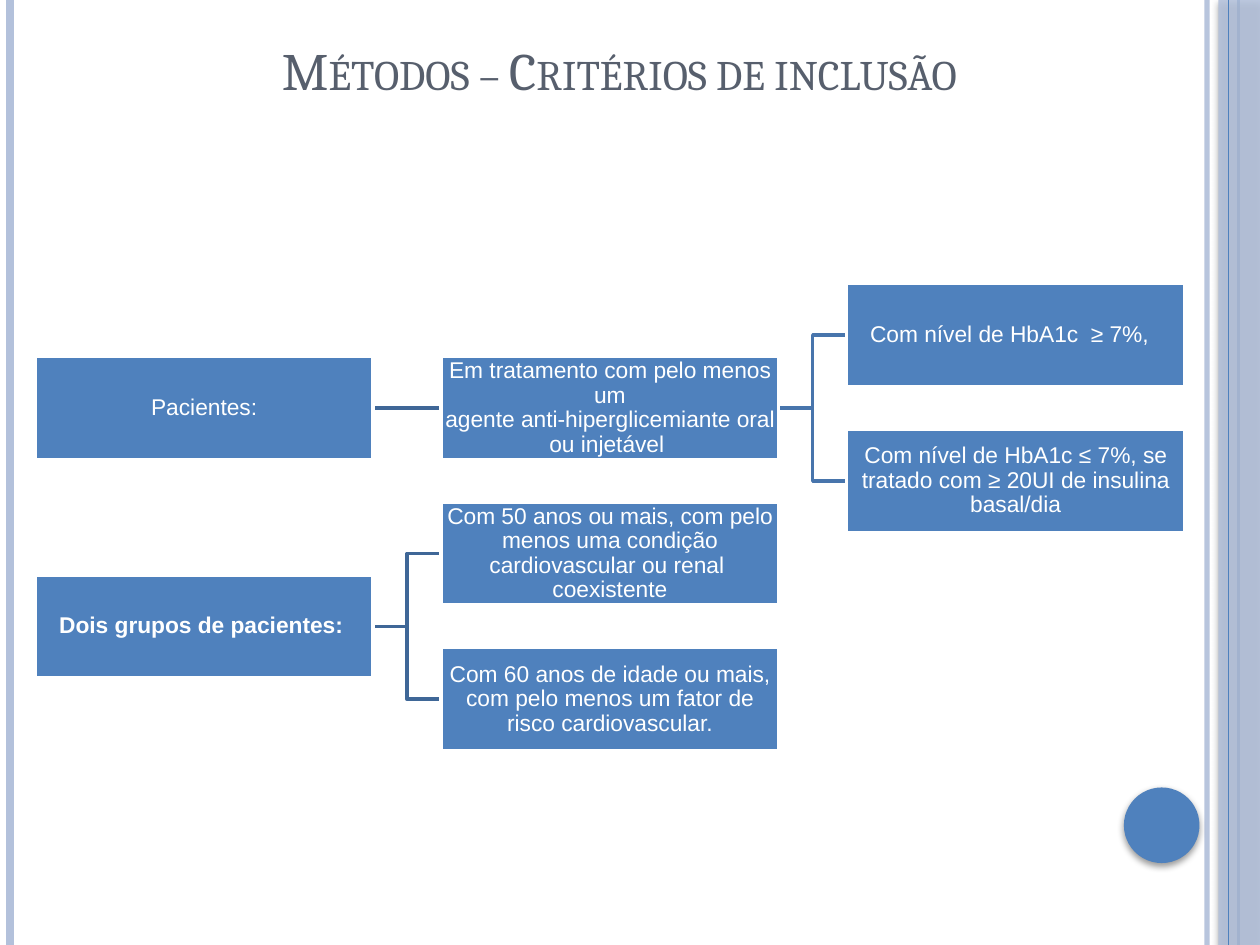
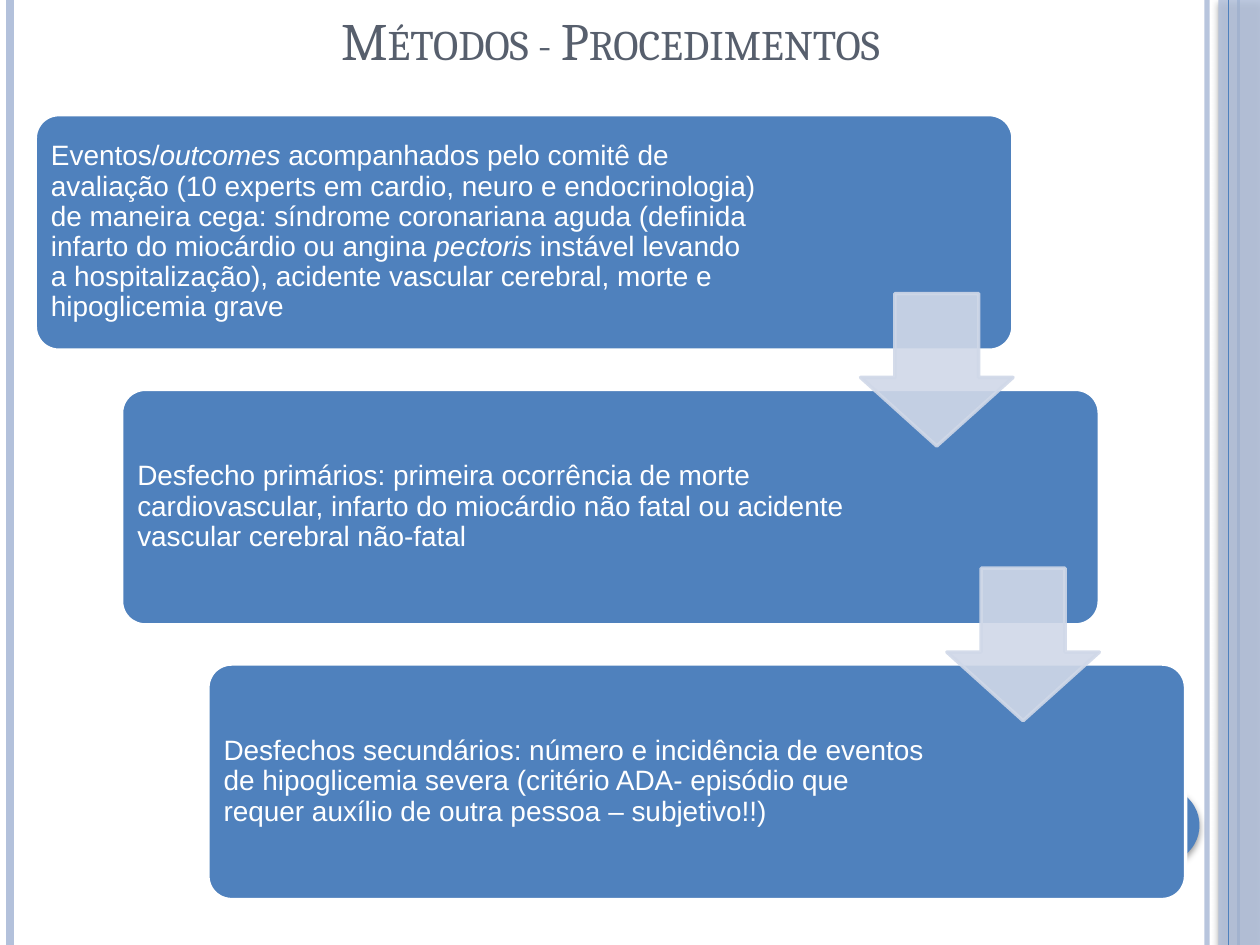
"""Build two slides on study methods: an inclusion tree and a staircase of procedures."""
import lxml.etree
import pptx
import pptx.dml.color
import pptx.enum.shapes
import pptx.enum.text
import pptx.oxml.ns
import pptx.util

COLORS = {
    "blue": "4F81BD", "band": "B3C1DB", "title": "575F6D", "white": "FFFFFF",
    "first link": "3F6797", "second link": "4875AC", "arrow": "D0D8E8", "shadow": "000000",
}
WIDTH, HEIGHT = 10, 7.5
TITLE_FONT, BODY_FONT = "Cambria", "Arial"

RULES = [
    (9.58, "band", 3, 93),
    (0.08, "band", 4.5, 100),
    (9.83, "blue", 1.5, 100),
    (9.75, "blue", 0.75, 100),
]
TITLES = [
    ("Métodos – Critérios de inclusão", (0.83, 0.21, 8.17, 0.64), 0.05),
    ("Métodos - Procedimentos", (0.76, 0.24, 8.17, 0.64), 0.32),
]

CRITERIA = {
    "patients": (0, 1, "Pacientes:"),
    "treated": (1, 1, "Em tratamento com pelo menos um\n"
                "agente anti-hiperglicemiante oral ou injetável "),
    "above": (2, 0, "Com nível de HbA1c  ≥ 7%,  "),
    "below": (2, 2, "Com nível de HbA1c ≤ 7%, se tratado com ≥ 20UI de insulina basal/dia"),
    "groups": (0, 4, "Dois grupos de pacientes: "),
    "fifty": (1, 3, "Com 50 anos ou mais, com pelo menos uma condição cardiovascular "
              "ou renal  coexistente"),
    "sixty": (1, 5, "Com 60 anos de idade ou mais, com pelo menos um fator de risco "
              "cardiovascular."),
}
BOLD_CRITERIA = {"groups"}
BRANCHES = [("groups", "sixty"), ("groups", "fifty"), ("treated", "below"),
            ("treated", "above"), ("patients", "treated")]
TREE_LEFT, TREE_TOP, COLUMN_STEP, ROW_STEP = 0.28, 2.25, 3.22, 0.578
NODE_WIDTH, NODE_HEIGHT = 2.68, 0.82

STEPS = [
    [("Eventos/", False), ("outcomes", True),
     (" acompanhados pelo comitê de avaliação (10 experts em cardio, neuro e endocrinologia) "
      "de maneira cega: síndrome coronariana aguda (definida infarto do miocárdio ou angina ",
      False),
     ("pectoris", True),
     (" instável levando a hospitalização), acidente vascular cerebral, morte e "
      "hipoglicemia grave", False)],
    [("Desfecho primários: primeira ocorrência de morte cardiovascular, infarto do miocárdio "
      "não fatal ou acidente vascular cerebral não-fatal", False)],
    [("Desfechos secundários: número e incidência de eventos de hipoglicemia severa "
      "(critério ADA- episódio que requer auxílio de outra pessoa – subjetivo!!)", False)],
]
STEP_LEFT, STEP_TOP, STEP_RIGHTWARD, STEP_DOWNWARD = 0.28, 0.91, 0.685, 2.18
STEP_WIDTH, STEP_HEIGHT = 7.76, 1.87
ARROW_LEFT, ARROW_TOP, ARROW_SIZE = 6.83, 2.33, 1.21


def inches(*lengths):
    return [pptx.util.Inches(length) for length in lengths]


def color(name):
    return pptx.dml.color.RGBColor.from_string(COLORS[name])


def child(parent, tag, **attributes):
    return lxml.etree.SubElement(parent, pptx.oxml.ns.qn(tag), attributes)


def set_alpha(parent, percent):
    if percent < 100:
        tint = next(parent.iter(pptx.oxml.ns.qn("a:srgbClr")))
        child(tint, "a:alpha", val=str(percent * 1000))


def style_line(shape, name, points, alpha=100):
    shape.line.color.rgb = color(name)
    shape.line.width = pptx.util.Pt(points)
    set_alpha(shape.line._get_or_add_ln(), alpha)


def add_line(page, start, end, name, points, alpha=100):
    line = page.shapes.add_connector(
        pptx.enum.shapes.MSO_CONNECTOR.STRAIGHT, *inches(*start, *end))
    style_line(line, name, points, alpha)
    child(line.element.spPr, "a:effectLst")
    return line


def add_box(page, kind, place, fill, alpha=100, outline=None, adjustments=()):
    box = page.shapes.add_shape(kind, *inches(*place))
    box.shadow.inherit = False
    box.fill.solid()
    box.fill.fore_color.rgb = color(fill)
    set_alpha(box.element.spPr, alpha)
    if outline:
        style_line(box, outline, 2, alpha)
    else:
        box.line.fill.background()
    for index, value in enumerate(adjustments):
        box.adjustments[index] = value
    return box


def cast_shadow(box):
    effects = box.element.spPr.find(pptx.oxml.ns.qn("a:effectLst"))
    shadow = child(effects, "a:outerShdw", blurRad=str(pptx.util.Pt(4)),
                   dist=str(pptx.util.Pt(2)), dir="5400000", rotWithShape="0")
    set_tint = child(shadow, "a:srgbClr", val=COLORS["shadow"])
    child(set_tint, "a:alpha", val="40000")


def set_frame(box, anchor, left, top, right, bottom):
    frame = box.text_frame
    frame.word_wrap = True
    frame.auto_size = pptx.enum.text.MSO_AUTO_SIZE.NONE
    frame.vertical_anchor = anchor
    frame.margin_left, frame.margin_top, frame.margin_right, frame.margin_bottom = inches(
        left, top, right, bottom)
    return frame.paragraphs[0]


def add_span(para, text, font, size, name, bold=False, italic=False):
    span = para.add_run()
    span.text = text
    span.font.name = font
    span.font.size = pptx.util.Pt(size)
    span.font.color.rgb = color(name)
    span.font.bold = bold
    span.font.italic = italic
    return span


def decorate_layout(layout, page):
    """Draw the shared bands on a page and move them to its layout."""
    shapes = pptx.enum.shapes.MSO_SHAPE
    rules = [add_line(page, (x, 0), (x, HEIGHT), *look) for x, *look in RULES]
    band = add_box(page, shapes.RECTANGLE, (9.67, 0, 0.33, HEIGHT), "band", 87)
    disc = add_box(page, shapes.OVAL, (8.92, 6.25, 0.6, 0.6), "blue")
    for box in (band, disc):
        cast_shadow(box)
    for part in [*rules[:3], band, rules[3], disc]:
        layout.element.cSld.spTree.append(part.element)


def write_title(page, text, place, bottom_inset):
    title = page.shapes.title
    title.left, title.top, title.width, title.height = inches(*place)
    para = set_frame(title, pptx.enum.text.MSO_ANCHOR.BOTTOM, 0.1, 0.05, 0.1, bottom_inset)
    para.alignment = pptx.enum.text.PP_ALIGN.CENTER
    span = add_span(para, text, TITLE_FONT, 30, "title")
    span.font._element.set("cap", "small")


def node_corner(key):
    column, row, _ = CRITERIA[key]
    return TREE_LEFT + column * COLUMN_STEP, TREE_TOP + row * ROW_STEP


def add_branch(page, parent, offspring):
    left, top = node_corner(parent)
    right, end_top = node_corner(offspring)
    left += NODE_WIDTH
    start_y, end_y = top + NODE_HEIGHT / 2, end_top + NODE_HEIGHT / 2
    name = "second link" if CRITERIA[parent][0] else "first link"
    if start_y == end_y:
        add_line(page, (left, start_y), (right, end_y), name, 2)
        return
    middle = (left + right) / 2
    builder = page.shapes.build_freeform(*inches(left, start_y))
    corners = [(middle, start_y), (middle, end_y), (right, end_y)]
    builder.add_line_segments([inches(*corner) for corner in corners], close=False)
    elbow = builder.convert_to_shape()
    elbow.shadow.inherit = False
    elbow.fill.background()
    style_line(elbow, name, 2)


def draw_tree(page):
    for branch in BRANCHES:
        add_branch(page, *branch)
    for key, (_, _, text) in CRITERIA.items():
        place = (*node_corner(key), NODE_WIDTH, NODE_HEIGHT)
        box = add_box(page, pptx.enum.shapes.MSO_SHAPE.RECTANGLE, place, "blue", outline="white")
        para = set_frame(box, pptx.enum.text.MSO_ANCHOR.MIDDLE, 0.01, 0.01, 0.01, 0.01)
        para.alignment = pptx.enum.text.PP_ALIGN.CENTER
        para.line_spacing = 0.9
        for index, line in enumerate(text.split("\n")):
            if index:
                para.add_line_break()
            add_span(para, line, BODY_FONT, 13, "white", bold=key in BOLD_CRITERIA)


def draw_staircase(page):
    shapes = pptx.enum.shapes.MSO_SHAPE
    for index, spans in enumerate(STEPS):
        place = (STEP_LEFT + index * STEP_RIGHTWARD, STEP_TOP + index * STEP_DOWNWARD,
                 STEP_WIDTH, STEP_HEIGHT)
        box = add_box(page, shapes.ROUNDED_RECTANGLE, place, "blue", outline="white",
                      adjustments=[0.1])
        para = set_frame(box, pptx.enum.text.MSO_ANCHOR.MIDDLE, 0.07, 0.07, 1.96, 0.07)
        para.alignment = pptx.enum.text.PP_ALIGN.LEFT
        para.line_spacing = 0.9
        for text, italic in spans:
            add_span(para, text, BODY_FONT, 16, "white", italic=italic)
    for index in range(len(STEPS) - 1):
        place = (ARROW_LEFT + index * STEP_RIGHTWARD, ARROW_TOP + index * STEP_DOWNWARD,
                 ARROW_SIZE, ARROW_SIZE)
        add_box(page, shapes.DOWN_ARROW, place, "arrow", 90, "arrow", [0.55, 0.45])


def main():
    deck = pptx.Presentation()
    deck.slide_width, deck.slide_height = inches(WIDTH, HEIGHT)
    layout = deck.slide_layouts.get_by_name("Title Only")
    pages = [deck.slides.add_slide(layout) for _ in TITLES]
    decorate_layout(layout, pages[0])
    for page, title, draw in zip(pages, TITLES, (draw_tree, draw_staircase)):
        write_title(page, *title)
        draw(page)
    deck.save("out.pptx")


if __name__ == "__main__":
    main()
